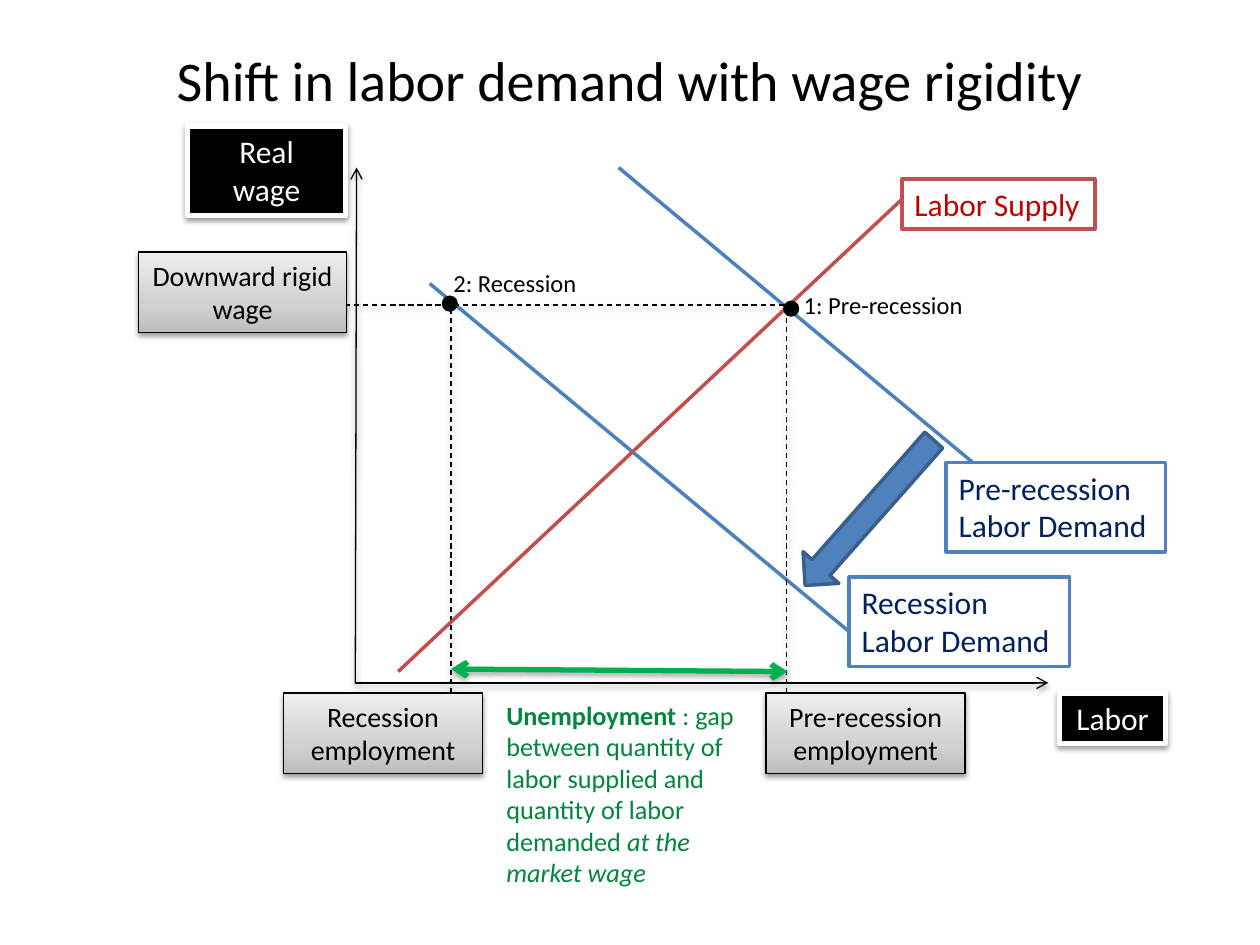
from copy import deepcopy
from dataclasses import dataclass
from typing import Optional

from lxml import etree
from pptx import Presentation
from pptx.dml.color import RGBColor
from pptx.enum.dml import MSO_LINE
from pptx.enum.shapes import MSO_CONNECTOR, MSO_SHAPE
from pptx.enum.text import MSO_ANCHOR, MSO_AUTO_SIZE, PP_ALIGN
from pptx.oxml.ns import qn
from pptx.util import Inches, Pt

STRAIGHT = MSO_CONNECTOR.STRAIGHT
DASH = MSO_LINE.DASH
DOWN_ARROW, OVAL = MSO_SHAPE.DOWN_ARROW, MSO_SHAPE.OVAL
CENTER, LEFT = PP_ALIGN.CENTER, PP_ALIGN.LEFT
MIDDLE = MSO_ANCHOR.MIDDLE
GROW = MSO_AUTO_SIZE.SHAPE_TO_FIT_TEXT

FONT = "Calibri"
BLACK, WHITE = "000000", "FFFFFF"
BLUE, DARK_BLUE, NAVY = "4F81BD", "3A5F8C", "002060"
RED, DARK_RED = "C0504D", "C00000"
GREEN, DARK_GREEN = "00B050", "00863D"
GRAY_STOPS = ((0, "BDBDBD"), (0.35, "D1D1D1"), (1, "EEEEEE"))

# Positions shared by the axes, guides and points
AXIS_X, AXIS_Y = 2.82, 5.42
WAGE_Y, EMPLOYMENT_Y = 2.42, 5.5
RECESSION_X, PRE_RECESSION_X = 3.58, 6.24
DOT_SIZE = 0.1


@dataclass(frozen=True)
class Line:
    start: tuple
    end: tuple
    color: str = BLACK
    width: float = 0.75
    dashed: bool = False
    arrows: tuple = ()
    shadow: Optional[int] = 38


@dataclass(frozen=True)
class BoxStyle:
    size: int
    color: str
    align: int = CENTER
    fill: Optional[str] = None
    gradient: tuple = ()
    line: Optional[str] = None
    line_width: float = 2
    shadow: Optional[int] = None


@dataclass(frozen=True)
class Box:
    text: str
    place: tuple
    style: BoxStyle
    wrap: bool = True


AXIS_NAME = BoxStyle(18, WHITE, fill=BLACK, line=WHITE, line_width=3, shadow=38)
VALUE = BoxStyle(16, BLACK, gradient=GRAY_STOPS, line=BLACK, line_width=0.75, shadow=38)
DEMAND = BoxStyle(18, NAVY, LEFT, fill=WHITE, line=BLUE)
SUPPLY = BoxStyle(18, DARK_RED, LEFT, fill=WHITE, line=RED)
POINT = BoxStyle(14, BLACK, LEFT)
NOTE = BoxStyle(15, DARK_GREEN, LEFT)

LINES = (
    Line((AXIS_X, AXIS_Y), (8.32, AXIS_Y), arrows=("tailEnd",)),
    Line((AXIS_X, AXIS_Y), (2.83, 1.33), arrows=("tailEnd",)),
    Line((3.41, 2.25), (6.82, 5.08), BLUE, 2, shadow=None),
    Line((4.91, 1.33), (8.32, 4.17), BLUE, 2, shadow=None),
    Line((2.74, WAGE_Y), (6.25, WAGE_Y), dashed=True),
    Line((RECESSION_X, EMPLOYMENT_Y), (RECESSION_X, WAGE_Y), dashed=True),
    Line((PRE_RECESSION_X, EMPLOYMENT_Y), (PRE_RECESSION_X, WAGE_Y), dashed=True),
    Line((3.16, 5.33), (7.16, 1.58), RED, 2, shadow=None),
    Line((RECESSION_X, 5.31), (6.25, 5.33), GREEN, 3,
         arrows=("headEnd", "tailEnd"), shadow=35),
)

BOXES = (
    Box("Real\nwage", (1.49, 1, 1.25, 0.71), AXIS_NAME),
    Box("Labor", (8.41, 5.5, 0.84, 0.4), AXIS_NAME, wrap=False),
    Box("Downward rigid\nwage", (1.1, 2, 1.65, 0.64), VALUE, wrap=False),
    Box("Recession\nemployment", (2.25, EMPLOYMENT_Y, 1.58, 0.64), VALUE),
    Box("Pre-recession\nemployment", (6.08, EMPLOYMENT_Y, 1.58, 0.64), VALUE),
    Box("Pre-recession Labor Demand", (7.51, 3.67, 1.74, 0.71), DEMAND),
    Box("Recession\nLabor Demand", (6.74, 4.58, 1.75, 0.71), DEMAND),
    Box("Labor Supply", (7.16, 1.42, 1.53, 0.4), SUPPLY, wrap=False),
    Box("1: Pre-recession", (6.28, 2.25, 1.47, 0.34), POINT, wrap=False),
    Box("2: Recession", (3.5, 2.08, 1.19, 0.34), POINT, wrap=False),
)

UNEMPLOYMENT = (
    ("Unemployment", {"bold": True}),
    (" : gap between quantity of labor supplied and quantity of labor demanded ", {}),
    ("at the market wage", {"italic": True}),
)


def rgb(color: str) -> RGBColor:
    return RGBColor.from_string(color)


def format_span(span, size: int, color: str, **extra) -> None:
    for name, value in {"name": FONT, "size": Pt(size), **extra}.items():
        setattr(span.font, name, value)
    span.font.color.rgb = rgb(color)


def set_outline(shape, color: str, width: float) -> None:
    shape.line.color.rgb = rgb(color)
    shape.line.width = Pt(width)


def set_effect(shape, opacity: Optional[int]) -> None:
    """Add a soft shadow straight below, or an empty effect list for none."""
    effects = etree.SubElement(shape._element.spPr, qn("a:effectLst"))
    if opacity is None:
        return
    shadow = etree.SubElement(effects, qn("a:outerShdw"), blurRad="40000",
                              dist="20000", dir="5400000", rotWithShape="0")
    tint = etree.SubElement(shadow, qn("a:srgbClr"), val=BLACK)
    etree.SubElement(tint, qn("a:alpha"), val=str(opacity * 1000))


def fill_gradient(shape, stops: tuple) -> None:
    """Fill upward; the default gradient has two stops, so one is duplicated."""
    shape.fill.gradient()
    shape.fill.gradient_angle = 90
    stop_list = shape._element.spPr.find(".//" + qn("a:gsLst"))
    stop_list.append(deepcopy(stop_list[0]))
    for stop, (position, color) in zip(shape.fill.gradient_stops, stops):
        stop.position = position
        stop.color.rgb = rgb(color)


def add_line(page, line: Line) -> None:
    ends = [Inches(value) for value in line.start + line.end]
    connector = page.shapes.add_connector(STRAIGHT, *ends)
    set_outline(connector, line.color, line.width)
    if line.dashed:
        connector.line.dash_style = DASH
    for arrow in line.arrows:
        etree.SubElement(connector.line._get_or_add_ln(), qn("a:" + arrow), type="arrow")
    set_effect(connector, line.shadow)


def add_box(page, box: Box):
    style = box.style
    shape = page.shapes.add_textbox(*map(Inches, box.place))
    if style.gradient:
        fill_gradient(shape, style.gradient)
    elif style.fill:
        shape.fill.solid()
        shape.fill.fore_color.rgb = rgb(style.fill)
    if style.line:
        set_outline(shape, style.line, style.line_width)
    set_effect(shape, style.shadow)
    frame = shape.text_frame
    frame.text = box.text
    frame.word_wrap = box.wrap
    frame.auto_size = GROW
    for para in frame.paragraphs:
        para.alignment = style.align
        for span in para.runs:
            format_span(span, style.size, style.color)
    return shape


def add_solid(page, kind: int, place: tuple, fill: str, line: str, rotation: float = 0) -> None:
    shape = page.shapes.add_shape(kind, *map(Inches, place))
    shape.rotation = rotation
    shape.fill.solid()
    shape.fill.fore_color.rgb = rgb(fill)
    set_outline(shape, line, 2)
    shape.shadow.inherit = False


def add_title(page, text: str) -> None:
    title = page.shapes.title
    place = {"left": 0.5, "top": 0, "width": 9, "height": 1.25}
    for name, value in place.items():
        setattr(title, name, Inches(value))
    title.text_frame.text = text
    title.text_frame.vertical_anchor = MIDDLE
    para = title.text_frame.paragraphs[0]
    para.alignment = CENTER
    format_span(para.runs[0], 32, BLACK)


def main() -> None:
    deck = Presentation()
    deck.slide_width, deck.slide_height = Inches(10), Inches(7.5)
    page = deck.slides.add_slide(deck.slide_layouts[5])
    add_title(page, "Shift in labor demand with wage rigidity")
    for line in LINES:
        add_line(page, line)
    for box in BOXES:
        add_box(page, box)
    note = add_box(page, Box("", (3.92, EMPLOYMENT_Y, 2.26, 1.62), NOTE))
    for text, emphasis in UNEMPLOYMENT:
        span = note.text_frame.paragraphs[0].add_run()
        span.text = text
        format_span(span, NOTE.size, NOTE.color, **emphasis)
    add_solid(page, DOWN_ARROW, (6.71, 3.3, 0.38, 1.54), BLUE, DARK_BLUE, 41.5)
    for left, top in ((3.52, 2.36), (6.23, 2.4)):
        add_solid(page, OVAL, (left, top, DOT_SIZE, DOT_SIZE), BLACK, BLACK)
    deck.save("out.pptx")


if __name__ == "__main__":
    main()
